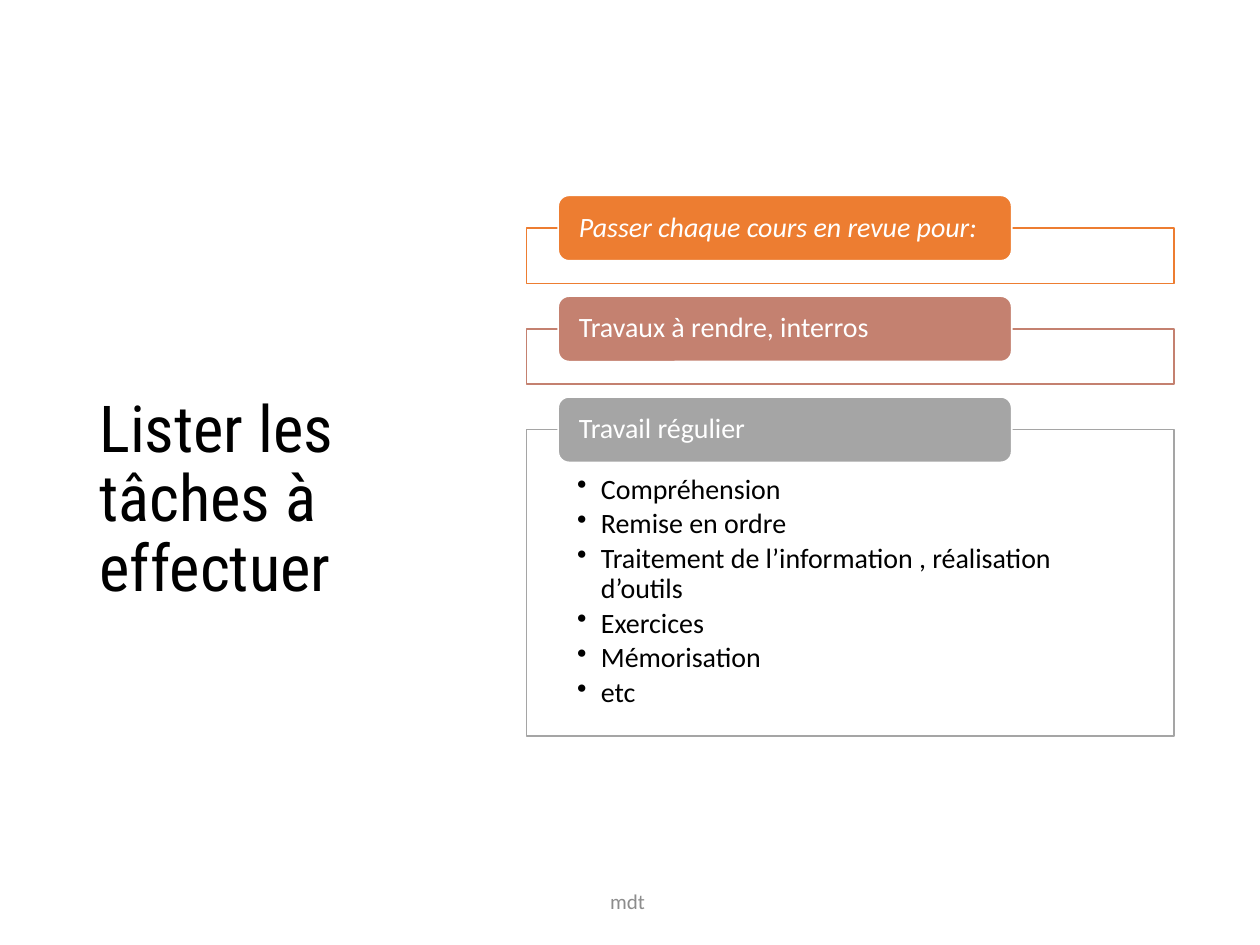
from dataclasses import dataclass

import pptx
import pptx.dml.color
import pptx.enum.shapes
import pptx.enum.text
import pptx.oxml
import pptx.oxml.ns
import pptx.util
from pptx.util import Inches

SHAPE = pptx.enum.shapes.MSO_SHAPE
ANCHOR = pptx.enum.text.MSO_ANCHOR
ALIGN = pptx.enum.text.PP_ALIGN


@dataclass(frozen=True)
class Theme:
    head: str = "Roboto Condensed"
    body: str = "Calibri"
    black: str = "000000"
    white: str = "FFFFFF"
    muted: str = "8C8C8C"
    orange: str = "ED7D31"
    rose: str = "C48170"
    gray: str = "A5A5A5"
    big: int = 37
    mid: int = 16
    small: int = 12


THEME = Theme()
PITCH = 0.8  # from one section to the next
STEPS = ["Compréhension", "Remise en ordre",
         "Traitement de l’information , réalisation d’outils",
         "Exercices", "Mémorisation", "etc"]


def color(code):
    return pptx.dml.color.RGBColor.from_string(code)


def write(shape, lines, size=THEME.mid, font=THEME.body, ink=THEME.black,
          italic=False, align=ALIGN.LEFT, anchor=ANCHOR.MIDDLE, space=0.9,
          after=0, inset=(0.1, 0.05, 0.1, 0.05), bullet=False):
    """Fill a shape with one paragraph per line; inset is left, top, right, bottom."""
    frame = shape.text_frame
    frame.word_wrap = True
    frame.vertical_anchor = anchor
    (frame.margin_left, frame.margin_top,
     frame.margin_right, frame.margin_bottom) = map(Inches, inset)
    for i, line in enumerate(lines):
        para = frame.add_paragraph() if i else frame.paragraphs[0]
        para.alignment = align
        para.line_spacing = space
        para.space_after = pptx.util.Pt(after)
        run = para.add_run()
        run.text = line
        run.font.size = pptx.util.Pt(size)
        run.font.name = font
        run.font.italic = italic
        run.font.color.rgb = color(ink)
        if bullet:
            mark(para)


def mark(para):
    """Give a paragraph a hanging bullet."""
    props = para._p.get_or_add_pPr()
    props.set("marL", str(Inches(0.19)))
    props.set("indent", str(-Inches(0.19)))
    dot = pptx.oxml.parse_xml(
        f'<a:buChar {pptx.oxml.ns.nsdecls("a")} char="•"/>')
    props.append(dot)


def text(slide, box, lines, **style):
    write(slide.shapes.add_textbox(*map(Inches, box)), lines, **style)


def block(slide, kind, box, fill, line):
    shape = slide.shapes.add_shape(kind, *map(Inches, box))
    shape.shadow.inherit = False
    shape.fill.solid()
    shape.fill.fore_color.rgb = color(fill)
    shape.line.color.rgb = color(line)
    shape.line.width = pptx.util.Pt(1)
    return shape


def section(slide, top, label, tint, height=0.44, items=(), italic=False):
    """Draw an outlined panel with a label on its upper edge."""
    panel = block(slide, SHAPE.RECTANGLE, (4.18, top + 0.26, 5.14, height),
                  THEME.white, tint)
    write(panel, items, anchor=ANCHOR.TOP, after=2.5, bullet=True,
          inset=(0.4, 0.36, 0.4, 0.12))
    tab = block(slide, SHAPE.ROUNDED_RECTANGLE, (4.43, top, 3.6, 0.52),
                tint, THEME.white)
    write(tab, [label], ink=THEME.white, italic=italic,
          inset=(0.14, 0, 0.14, 0))


def main():
    deck = pptx.Presentation()
    deck.slide_width, deck.slide_height = Inches(10), Inches(7.5)
    slide = deck.slides.add_slide(deck.slide_layouts[6])

    text(slide, (0.69, 0.68, 2.77, 6.02), ["Lister les tâches à effectuer"],
         size=THEME.big, font=THEME.head, inset=(0.1, 0.62, 0.1, 0.05))
    text(slide, (3.31, 6.95, 3.38, 0.4), ["mdt "], size=THEME.small,
         ink=THEME.muted, align=ALIGN.CENTER, space=1)

    parts = [
        dict(label="Passer chaque cours en revue pour:", tint=THEME.orange,
             italic=True),
        dict(label="Travaux à rendre, interros", tint=THEME.rose),
        dict(label="Travail régulier", tint=THEME.gray, height=2.43,
             items=STEPS),
    ]
    for i, part in enumerate(parts):
        section(slide, 1.55 + i * PITCH, **part)

    deck.save("out.pptx")


if __name__ == "__main__":
    main()
